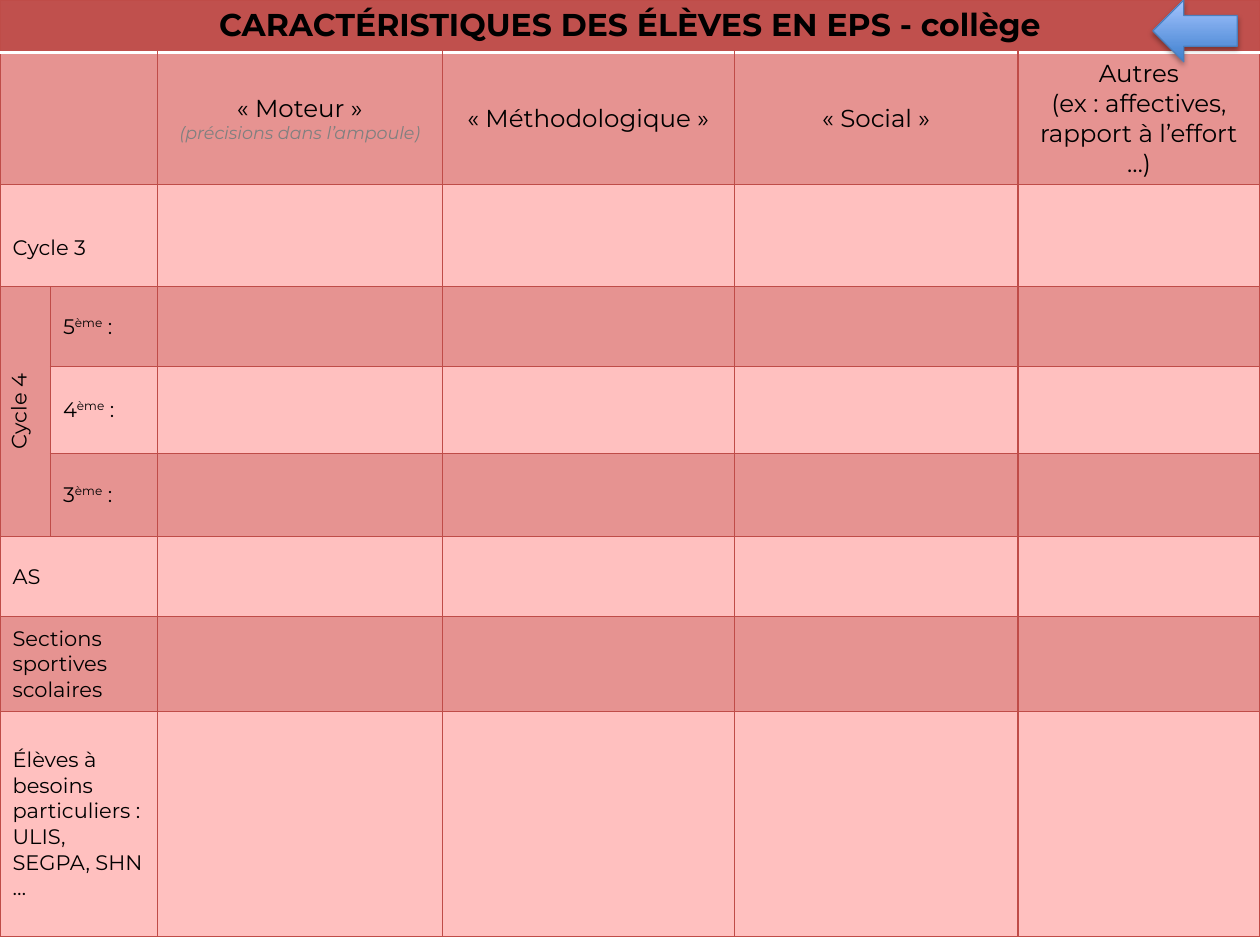
"""Build the slide with the grid of pupil characteristics in middle-school PE."""
import lxml.etree
import pptx
import pptx.dml.color
import pptx.enum.shapes
import pptx.enum.text
import pptx.oxml
import pptx.oxml.ns
import pptx.util

Inches = pptx.util.Inches
Pt = pptx.util.Pt
RGB = pptx.dml.color.RGBColor.from_string
CENTER = pptx.enum.text.PP_ALIGN.CENTER
LEFT = pptx.enum.text.PP_ALIGN.LEFT

THEME = {
    "banner": "C0504D", "dark": "E69391", "light": "FFC0BF",
    "grid": "BF4C48", "rule": "FFFFFF",
    "arrow_bottom": "3F80CE", "arrow_top": "A4C4FF", "arrow_line": "4B7EBC",
    "title": {"name": "Montserrat", "size": Pt(18), "bold": True, "italic": False, "color": "000000"},
    "heading": {"name": "Montserrat", "size": Pt(14), "bold": False, "italic": False, "color": "000000"},
    "hint": {"name": "Montserrat", "size": Pt(10), "bold": False, "italic": True, "color": "808080"},
    "label": {"name": "Montserrat", "size": Pt(12), "bold": False, "italic": False, "color": "000000"},
}
NAMESPACE = pptx.oxml.ns.nsdecls("a")


def write_cell(cell, lines, alignment):
    """Fill a cell with (style, text pieces) lines; every second piece is raised."""
    for index, (style, pieces) in enumerate(lines):
        frame = cell.text_frame
        paragraph = frame.paragraphs[0] if index == 0 else frame.add_paragraph()
        paragraph.alignment = alignment
        for position, piece in enumerate(pieces):
            run = paragraph.add_run()
            run.text = piece
            for name, value in THEME[style].items():
                if name == "color":
                    run.font.color.rgb = RGB(value)
                else:
                    setattr(run.font, name, value)
            if position % 2:
                run._r.get_or_add_rPr().set("baseline", "30000")


def set_borders(cell, borders):
    """Draw the cell's sides from (tag, colour, points) in schema order."""
    properties = cell._tc.get_or_add_tcPr()
    for index, (tag, color, points) in enumerate(borders):
        properties.insert(index, pptx.oxml.parse_xml(
            f'<a:{tag} {NAMESPACE} w="{Pt(points)}"><a:solidFill>'
            f'<a:srgbClr val="{color}"/></a:solidFill></a:{tag}>'))


presentation = pptx.Presentation()
presentation.slide_width = Inches(10)
presentation.slide_height = Inches(7.5)
slide = presentation.slides.add_slide(presentation.slide_layouts[6])

column_widths = [0.4, 0.85, 2.26, 2.32, 2.25, 1.92]
row_heights = [0.42, 1.04, 0.81, 0.63, 0.69, 0.66, 0.64, 0.75, 1.79]
table = slide.shapes.add_table(
    len(row_heights), len(column_widths), 0, 0, Inches(10), Inches(7.43)).table
table.first_row = False
table.horz_banding = False
for column, width in zip(table.columns, column_widths):
    column.width = Inches(width)
for row, height in zip(table.rows, row_heights):
    row.height = Inches(height)

for row_index, row in enumerate(table.rows):
    fill = "banner" if row_index == 0 else "dark" if row_index % 2 else "light"
    top = (THEME["rule"], 2) if row_index == 1 else (THEME["grid"], 0.75)
    bottom = (THEME["rule"], 2) if row_index == 0 else (THEME["grid"], 0.75)
    for cell in row.cells:
        cell.fill.solid()
        cell.fill.fore_color.rgb = RGB(THEME[fill])
        set_borders(cell, [("lnL", THEME["grid"], 0.75), ("lnR", THEME["grid"], 0.75),
                           ("lnT", *top), ("lnB", *bottom)])
        if row_index:
            cell.vertical_anchor = pptx.enum.text.MSO_ANCHOR.MIDDLE

table.cell(0, 0).merge(table.cell(0, 5))
table.cell(3, 0).merge(table.cell(5, 0))
for row_index in (1, 2, 6, 7, 8):
    table.cell(row_index, 0).merge(table.cell(row_index, 1))

write_cell(table.cell(0, 0), [("title", ["CARACTÉRISTIQUES DES ÉLÈVES EN EPS - collège"])], CENTER)

headings = [
    [("heading", ["« Moteur »"]), ("hint", ["(précisions dans l’ampoule)"])],
    [("heading", ["« Méthodologique »"])],
    [("heading", ["« Social »"])],
    [("heading", ["Autres"]), ("heading", ["(ex : affectives, rapport à l’effort …)"])],
]
for column_index, lines in enumerate(headings, start=2):
    write_cell(table.cell(1, column_index), lines, CENTER)

labels = {
    2: "Cycle 3",
    6: "AS",
    7: "Sections sportives scolaires",
    8: "Élèves à besoins particuliers : ULIS, SEGPA, SHN …",
}
for row_index, label in labels.items():
    write_cell(table.cell(row_index, 0), [("label", [label])], LEFT)
table.cell(2, 0).margin_top = Inches(0.25)

cycle_cell = table.cell(3, 0)
write_cell(cycle_cell, [("label", ["Cycle 4"])], CENTER)
cycle_cell._tc.get_or_add_tcPr().set("vert", "vert270")
for row_index, grade in enumerate("543", start=3):
    write_cell(table.cell(row_index, 1), [("label", [grade, "ème", " :"])], LEFT)

arrow = slide.shapes.add_shape(
    pptx.enum.shapes.MSO_SHAPE.LEFT_ARROW, Inches(9.15), 0, Inches(0.67), Inches(0.49))
arrow.fill.gradient()
arrow.fill.gradient_angle = 90
for stop, name in zip(arrow.fill.gradient_stops, ("arrow_bottom", "arrow_top")):
    stop.color.rgb = RGB(THEME[name])
arrow.line.color.rgb = RGB(THEME["arrow_line"])
arrow.line.width = Pt(0.75)
arrow.shadow.inherit = False
effects = arrow._element.spPr.find(pptx.oxml.ns.qn("a:effectLst"))
effects.append(lxml.etree.fromstring(
    f'<a:outerShdw {NAMESPACE} blurRad="{Pt(3.1)}" dist="{Pt(1.8)}" dir="5400000" rotWithShape="0">'
    '<a:srgbClr val="000000"><a:alpha val="35000"/></a:srgbClr></a:outerShdw>'))

presentation.save("out.pptx")
